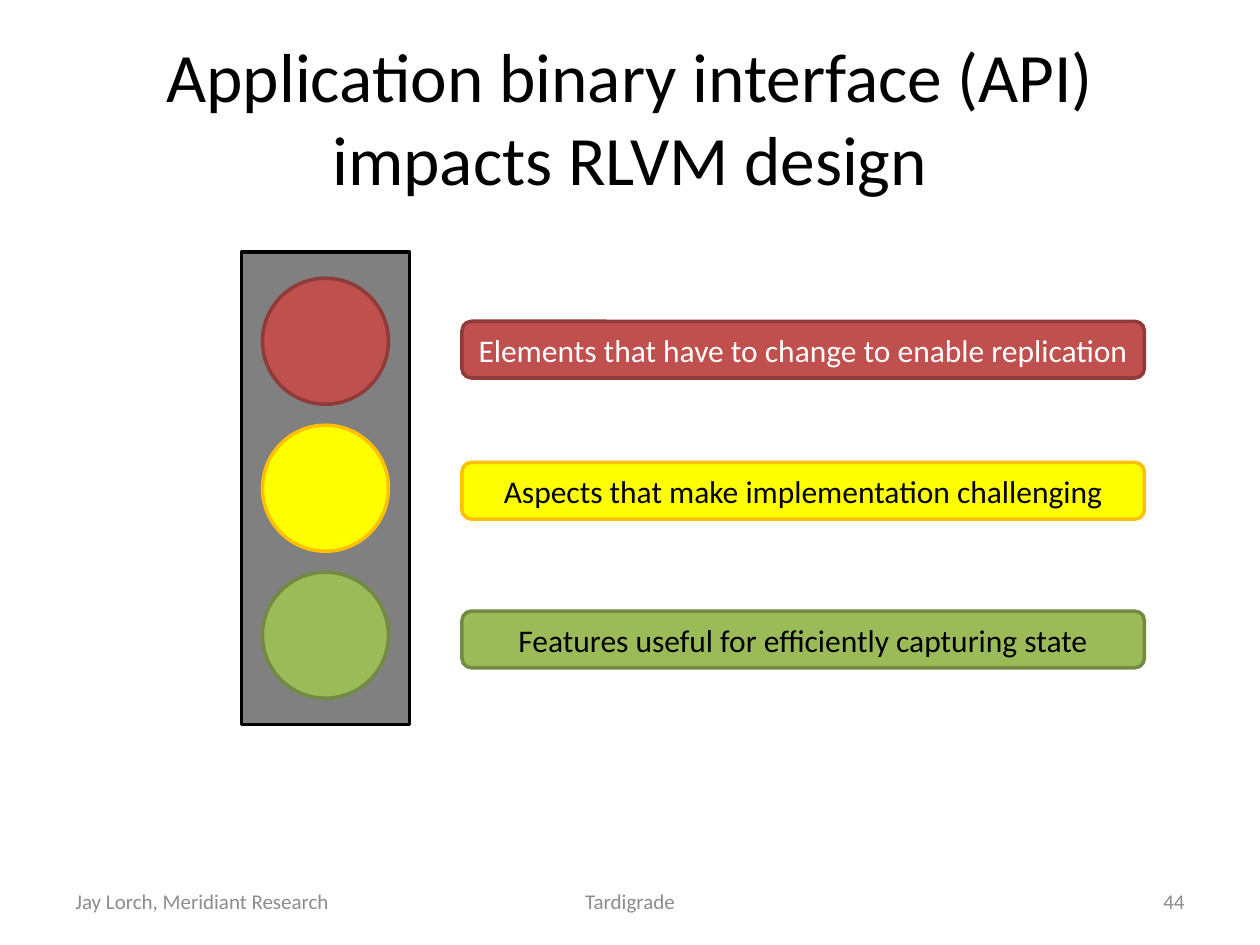
import pptx
import pptx.util
import pptx.dml.color
import pptx.enum.shapes
import pptx.enum.text

Pt = pptx.util.Pt
SHAPE = pptx.enum.shapes.MSO_SHAPE
ALIGN = pptx.enum.text.PP_ALIGN
MIDDLE = pptx.enum.text.MSO_ANCHOR.MIDDLE

FONT = "Calibri"
COLORS = {
    "black": "000000",
    "white": "FFFFFF",
    "footer": "8C8C8C",
    "housing": "808080",
    "red": "C0504D",
    "red edge": "8E3B39",
    "yellow": "FFFF00",
    "yellow edge": "FFC000",
    "green": "9BBB59",
    "green edge": "738A42",
}

# light colour, text colour, meaning, top of the label within the legend
SIGNALS = [
    ("red", "white", "Elements that have to change to enable replication", 0),
    ("yellow", "black", "Aspects that make implementation challenging", 80.64),
    ("green", "black", "Features useful for efficiently capturing state", 165.6),
]


def rgb(name):
    return pptx.dml.color.RGBColor.from_string(COLORS[name])


def write(shape, text, size, color, align, wrap=True):
    frame = shape.text_frame
    frame.text = text
    frame.word_wrap = wrap
    frame.vertical_anchor = MIDDLE
    paragraph = frame.paragraphs[0]
    paragraph.alignment = align
    font = paragraph.runs[0].font
    font.name = FONT
    font.size = Pt(size)
    font.color.rgb = rgb(color)


def add_text(page, box, text, size, color, align):
    shape = page.shapes.add_textbox(*map(Pt, box))
    write(shape, text, size, color, align)


def add_outlined(page, kind, box, fill, edge):
    shape = page.shapes.add_shape(kind, *map(Pt, box))
    shape.shadow.inherit = False
    shape.fill.solid()
    shape.fill.fore_color.rgb = rgb(fill)
    shape.line.color.rgb = rgb(edge)
    shape.line.width = Pt(2)
    return shape


def add_traffic_light(page, box):
    left, top, width, height = box
    add_outlined(page, SHAPE.RECTANGLE, box, "housing", "black")
    diameter, pitch = 72, 84
    first_top = top + (height - diameter - 2 * pitch) / 2
    light_left = left + (width - diameter) / 2
    for index, (color, *_) in enumerate(SIGNALS):
        light = (light_left, first_top + index * pitch, diameter, diameter)
        add_outlined(page, SHAPE.OVAL, light, color, color + " edge")


def add_legend(page, box):
    left, top, width, label_height = box
    for color, text_color, meaning, offset in SIGNALS:
        label = add_outlined(page, SHAPE.ROUNDED_RECTANGLE,
                             (left, top + offset, width, label_height),
                             color, color + " edge")
        write(label, meaning, 18, text_color, ALIGN.CENTER, wrap=False)


def add_footer(page, box):
    left, top, width, height = box
    side, middle = 168, 228
    parts = [
        (left, side, "Jay Lorch, Meridiant Research", ALIGN.LEFT),
        (left + (width - middle) / 2, middle, "Tardigrade", ALIGN.CENTER),
        (left + width - side, side, "44", ALIGN.RIGHT),
    ]
    for part_left, part_width, text, align in parts:
        add_text(page, (part_left, top, part_width, height),
                 text, 12, "footer", align)


def main():
    deck = pptx.Presentation()
    deck.slide_width, deck.slide_height = Pt(720), Pt(540)
    page = deck.slides.add_slide(deck.slide_layouts[6])
    add_text(page, (36, 21.6, 648, 90),
             "Application binary interface (API) impacts RLVM design",
             39.6, "black", ALIGN.CENTER)
    add_traffic_light(page, (138, 144, 96, 270))
    add_legend(page, (264, 183.6, 390, 32.4))
    add_footer(page, (36, 500.5, 648, 28.8))
    deck.save("out.pptx")


if __name__ == "__main__":
    main()
